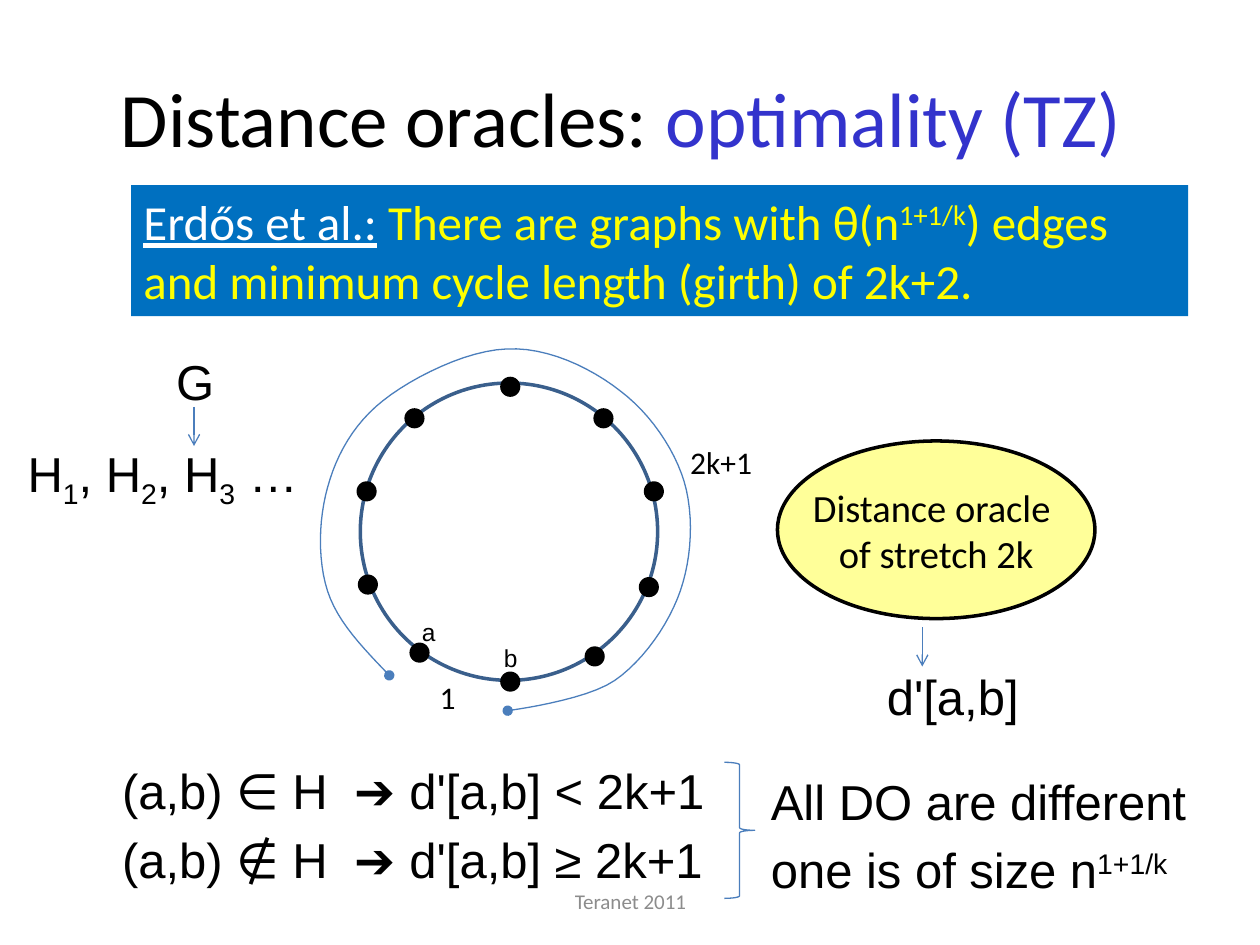
from dataclasses import dataclass

from lxml.etree import SubElement
from pptx import Presentation
from pptx.dml.color import RGBColor
from pptx.enum.shapes import MSO_CONNECTOR as Connector, MSO_SHAPE as Shape
from pptx.enum.text import MSO_ANCHOR as Anchor, MSO_UNDERLINE as Underline, PP_ALIGN as Align
from pptx.oxml.ns import qn
from pptx.util import Inches, Pt


@dataclass(frozen=True)
class Theme:
    black: str = "000000"
    white: str = "FFFFFF"
    accent: str = "3333CC"
    banner: str = "0070C0"
    yellow: str = "FFFF00"
    oracle: str = "FFFF99"
    ring: str = "3A5F8C"
    line: str = "4B7EBC"
    gray: str = "8C8C8C"
    heading_font: str = "Calibri"
    formula_font: str = "Arial"
    title_size: int = 44
    body_size: int = 28
    oracle_size: int = 22
    label_size: int = 18
    node_size: int = 14
    footer_size: int = 12
    thin: float = 0.75
    thick: float = 2


@dataclass(frozen=True)
class Span:
    """A piece of text with its own look."""
    text: str
    color: str = ""
    baseline: int = 0
    underline: bool = False


class SlideBuilder:
    def __init__(self, slide, theme):
        self.slide = slide
        self.theme = theme

    def fill_text(self, shape, paragraphs, size, font, color=None, align=Align.LEFT,
                  anchor=Anchor.TOP, wrap=True, spaced=False):
        frame = shape.text_frame
        frame.word_wrap = wrap
        frame.vertical_anchor = anchor
        for index, spans in enumerate(paragraphs):
            paragraph = frame.paragraphs[0] if index == 0 else frame.add_paragraph()
            paragraph.alignment = align
            if spaced:
                before = SubElement(paragraph._p.get_or_add_pPr(), qn("a:spcBef"))
                SubElement(before, qn("a:spcPct")).set("val", "20000")
            paragraph.font.size = Pt(size)
            paragraph.font.name = font
            paragraph.font.color.rgb = RGBColor.from_string(color or self.theme.black)
            for span in spans:
                self.add_span(paragraph, span)

    def add_span(self, paragraph, span):
        if isinstance(span, str):
            span = Span(span)
        run = paragraph.add_run()
        run.text = span.text
        if span.color:
            run.font.color.rgb = RGBColor.from_string(span.color)
        if span.underline:
            run.font.underline = Underline.SINGLE_LINE
        if span.baseline:
            run._r.get_or_add_rPr().set("baseline", str(span.baseline * 1000))

    def text(self, box, paragraphs, size, font, **style):
        shape = self.slide.shapes.add_textbox(*map(Inches, box))
        self.fill_text(shape, paragraphs, size, font, **style)

    def formula(self, box, *paragraphs, size=None):
        self.text(box, paragraphs, size or self.theme.body_size,
                  self.theme.formula_font, spaced=True)

    def paint(self, shape, fill=None, line=None, width=None):
        shape.shadow.inherit = False
        if fill:
            shape.fill.solid()
            shape.fill.fore_color.rgb = RGBColor.from_string(fill)
        else:
            shape.fill.background()
        if line:
            shape.line.color.rgb = RGBColor.from_string(line)
            shape.line.width = Pt(width)
        else:
            shape.line.fill.background()

    def shape(self, kind, box, **look):
        shape = self.slide.shapes.add_shape(kind, *map(Inches, box))
        self.paint(shape, **look)
        return shape

    def line_end(self, shape, end, kind):
        SubElement(shape.line._get_or_add_ln(), qn(f"a:{end}")).set("type", kind)

    def down_arrow(self, x, top, length):
        arrow = self.slide.shapes.add_connector(
            Connector.STRAIGHT, *map(Inches, (x, top, x, top + length)))
        arrow.line.color.rgb = RGBColor.from_string(self.theme.line)
        arrow.line.width = Pt(self.theme.thin)
        self.line_end(arrow, "tailEnd", "arrow")
        SubElement(arrow._element.spPr, qn("a:effectLst"))

    def curve(self, start, segments, steps=12):
        """Draw joined cubic Bézier segments as one fine outline."""
        points, origin = [], start
        for first, second, end in segments:
            for step in range(1, steps + 1):
                t = step / steps
                u = 1 - t
                points.append(tuple(
                    Inches(u**3 * a + 3 * u * u * t * b + 3 * u * t * t * c + t**3 * d)
                    for a, b, c, d in zip(origin, first, second, end)))
            origin = end
        builder = self.slide.shapes.build_freeform(*map(Inches, start))
        builder.add_line_segments(points, close=False)
        shape = builder.convert_to_shape()
        self.paint(shape, line=self.theme.line, width=self.theme.thin)
        self.line_end(shape, "headEnd", "oval")
        self.line_end(shape, "tailEnd", "oval")


def main():
    theme = Theme()
    presentation = Presentation()
    presentation.slide_width, presentation.slide_height = Inches(10), Inches(7.5)
    slide = presentation.slides.add_slide(presentation.slide_layouts[6])
    builder = SlideBuilder(slide, theme)

    # Title and theorem
    builder.text((0, 0.3, 10, 1.25),
                 [["Distance oracles: ", Span("optimality (TZ) ", theme.accent)]],
                 theme.title_size, theme.heading_font, align=Align.CENTER, anchor=Anchor.MIDDLE)
    theorem = builder.shape(Shape.RECTANGLE, (1.04, 1.47, 8.39, 1.04), fill=theme.banner)
    builder.fill_text(theorem, [[
        Span("Erdős et al.:", theme.white, underline=True),
        " There are graphs with θ(n", Span("1+1/k", baseline=30),
        ") edges and minimum cycle length (girth) of 2k+2."]],
        theme.body_size, theme.heading_font, color=theme.yellow, spaced=True)

    # Graph and its subgraphs
    builder.formula((1.3, 2.74, 0.55, 0.81), ["G"])
    builder.down_arrow(1.54, 3.23, 0.31)
    subgraphs = []
    for number, tail in (("1", ", H"), ("2", ", H"), ("3", " …")):
        subgraphs += [Span(number, baseline=-25), tail]
    builder.formula((0.12, 3.47, 2.75, 0.81), ["H", *subgraphs])

    # Cycle with its nodes
    builder.shape(Shape.OVAL, (2.86, 3.04, 2.36, 2.36), line=theme.ring, width=theme.thick)
    dot = 0.16
    nodes = [(3.97, 2.99), (4.71, 3.24), (5.11, 3.82), (5.07, 4.58), (4.64, 5.13),
             (3.97, 5.33), (3.25, 5.1), (2.84, 4.56), (2.83, 3.82), (3.21, 3.24)]
    for left, top in nodes:
        builder.shape(Shape.OVAL, (left, top, dot, dot), fill=theme.black)
    for name, left, top in (("a", 3.25, 4.85), ("b", 3.9, 5.05)):
        builder.formula((left, top, 0.33, 0.41), [name], size=theme.node_size)

    # Long way round and edge lengths
    builder.curve((3.09, 5.36), [
        ((2.89, 5.15), (2.68, 4.94), (2.6, 4.69)),
        ((2.52, 4.44), (2.53, 4.12), (2.6, 3.87)),
        ((2.67, 3.61), (2.81, 3.36), (3.04, 3.18)),
        ((3.28, 2.99), (3.71, 2.78), (4.02, 2.77)),
        ((4.34, 2.75), (4.69, 2.92), (4.92, 3.1)),
        ((5.16, 3.28), (5.35, 3.56), (5.43, 3.82)),
        ((5.51, 4.09), (5.49, 4.43), (5.4, 4.69)),
        ((5.31, 4.95), (5.11, 5.24), (4.88, 5.4)),
        ((4.65, 5.56), (4.03, 5.64), (4.03, 5.64)),
    ])
    for length, box in (("2k+1", (5.38, 3.47, 0.93, 0.4)), ("1", (3.39, 5.33, 0.33, 0.4))):
        builder.text(box, [[length]], theme.label_size, theme.heading_font)

    # Distance oracle and its answer
    oracle = builder.shape(Shape.OVAL, (6.17, 3.5, 2.52, 1.41),
                           fill=theme.oracle, line=theme.black, width=theme.thick)
    builder.fill_text(oracle, [["Distance oracle "], ["of stretch 2k"]],
                      theme.oracle_size, theme.heading_font,
                      align=Align.CENTER, anchor=Anchor.MIDDLE, wrap=False)
    builder.down_arrow(7.32, 4.98, 0.31)
    builder.formula((6.94, 5.24, 2.75, 0.81), ["d'[a,b]"])

    # Conclusion
    builder.formula((0.87, 5.99, 10.08, 0.81),
                    ["(a,b) ∈ H  ➔ d'[a,b] < 2k+1"], ["(a,b) ∉ H  ➔ d'[a,b] ≥ 2k+1"])
    builder.shape(Shape.RIGHT_BRACE, (5.75, 6.05, 0.24, 1.08), line=theme.line, width=theme.thin)
    builder.formula((6.02, 6.07, 6.14, 0.61), ["All DO are different"],
                    ["one is of size n", Span("1+1/k", baseline=30)])

    # Footer
    builder.text((3.42, 6.95, 3.17, 0.4), [["Teranet 2011"]], theme.footer_size,
                 theme.heading_font, color=theme.gray, align=Align.CENTER, anchor=Anchor.MIDDLE)

    presentation.save("out.pptx")


if __name__ == "__main__":
    main()
